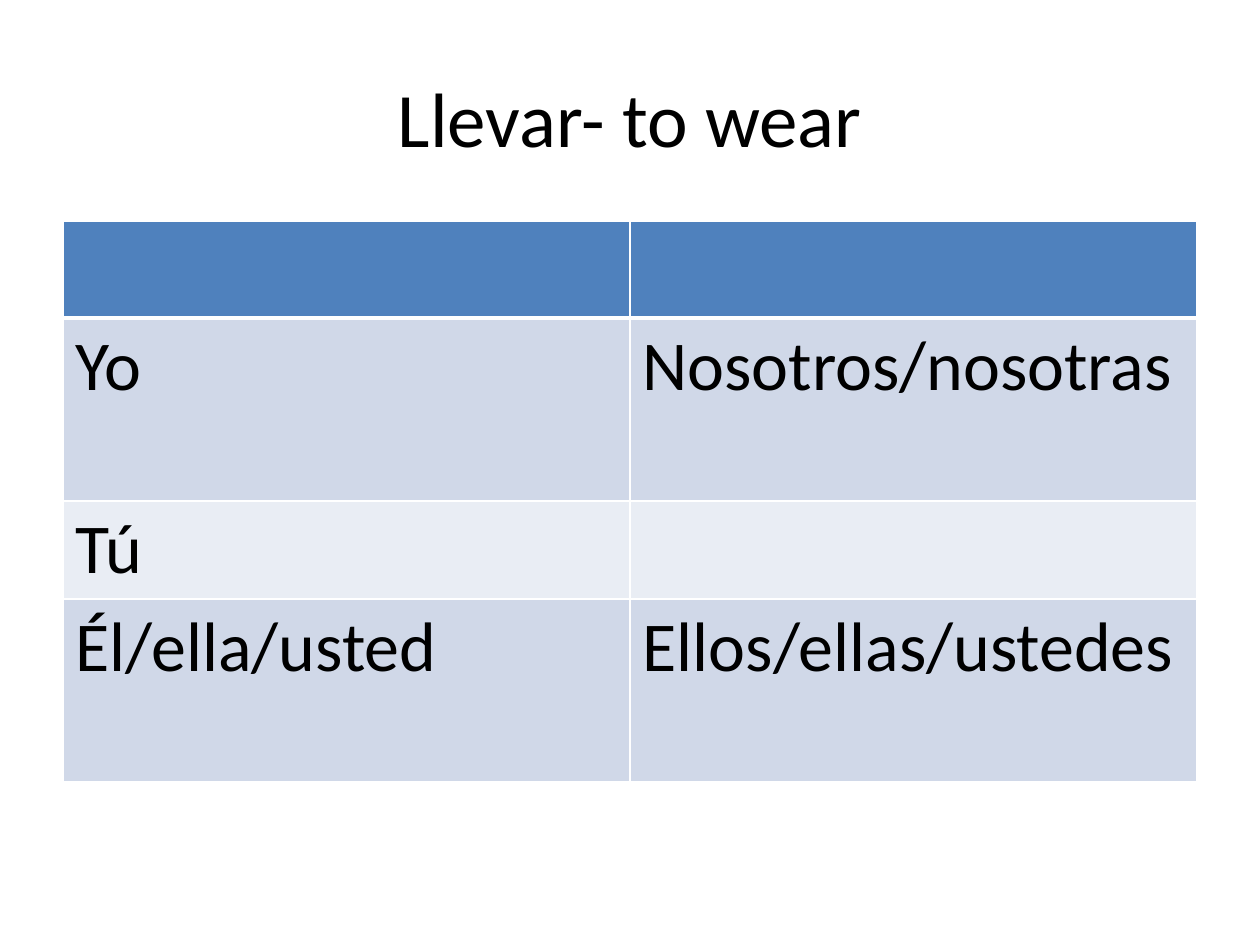
from lxml.etree import SubElement
from pptx import Presentation
from pptx.dml.color import RGBColor as RGB
from pptx.enum.text import MSO_ANCHOR as Anchor, PP_ALIGN as Align
from pptx.oxml.ns import qn
from pptx.util import Pt

EMU_PER_PX = 914400 / 126
SLIDE_SIZE = (1260, 945)
TITLE_ONLY = 5


def px(length):
    return round(length * EMU_PER_PX)


def color(hex_string):
    return RGB.from_string(hex_string)


class SlideBuilder:
    font_name = "Calibri"
    text_color = "000000"
    border_color = "FFFFFF"
    header_fill = "4F81BD"
    band_fills = ("D0D8E8", "E9EDF4")

    def __init__(self, slide):
        self.slide = slide

    def format_text(self, paragraph, size, align):
        paragraph.alignment = align
        values = {"name": self.font_name, "size": Pt(size), "bold": False}
        for attribute, value in values.items():
            setattr(paragraph.font, attribute, value)
        paragraph.font.color.rgb = color(self.text_color)

    def title(self, wording, box, size):
        heading = self.slide.shapes.title
        for side, length in zip(("left", "top", "width", "height"), box):
            setattr(heading, side, px(length))
        heading.text_frame.text = wording
        heading.text_frame.vertical_anchor = Anchor.MIDDLE
        self.format_text(heading.text_frame.paragraphs[0], size, Align.CENTER)

    def border(self, cell, edge, width):
        properties = cell._tc.get_or_add_tcPr()
        line = SubElement(properties, qn(f"a:ln{edge}"), w=str(Pt(width)))
        fill = SubElement(line, qn("a:solidFill"))
        SubElement(fill, qn("a:srgbClr"), val=self.border_color)

    def table(self, rows, left, top, col_width, row_heights, size):
        columns = len(rows[0])
        grid = self.slide.shapes.add_table(
            len(rows), columns, px(left), px(top),
            px(col_width * columns), px(sum(row_heights))).table
        for column in grid.columns:
            column.width = px(col_width)
        for r, (words, height) in enumerate(zip(rows, row_heights)):
            grid.rows[r].height = px(height)
            # Thick rule below the header, thin ones elsewhere
            widths = {"L": 1, "R": 1, "T": 3 if r == 1 else 1, "B": 3 if r == 0 else 1}
            for c, word in enumerate(words):
                cell = grid.cell(r, c)
                for edge, width in widths.items():
                    self.border(cell, edge, width)
                cell.fill.solid()
                cell.fill.fore_color.rgb = color(
                    self.band_fills[(r - 1) % 2] if r else self.header_fill)
                if word:
                    cell.text = word
                    self.format_text(cell.text_frame.paragraphs[0], size, Align.LEFT)


def main():
    deck = Presentation()
    deck.slide_width, deck.slide_height = map(px, SLIDE_SIZE)
    builder = SlideBuilder(deck.slides.add_slide(deck.slide_layouts[TITLE_ONLY]))

    # Verb heading
    builder.title("Llevar- to wear", (63, 38, 1134, 157), 44)

    # Pronoun grid: singular on the left, plural on the right
    pronouns = [
        ("", ""),
        ("Yo", "Nosotros/nosotras"),
        ("Tú", ""),
        ("Él/ella/usted", "Ellos/ellas/ustedes"),
    ]
    builder.table(pronouns, 63, 221, 567, (97, 183, 98, 183), 40)

    deck.save("out.pptx")


if __name__ == "__main__":
    main()
